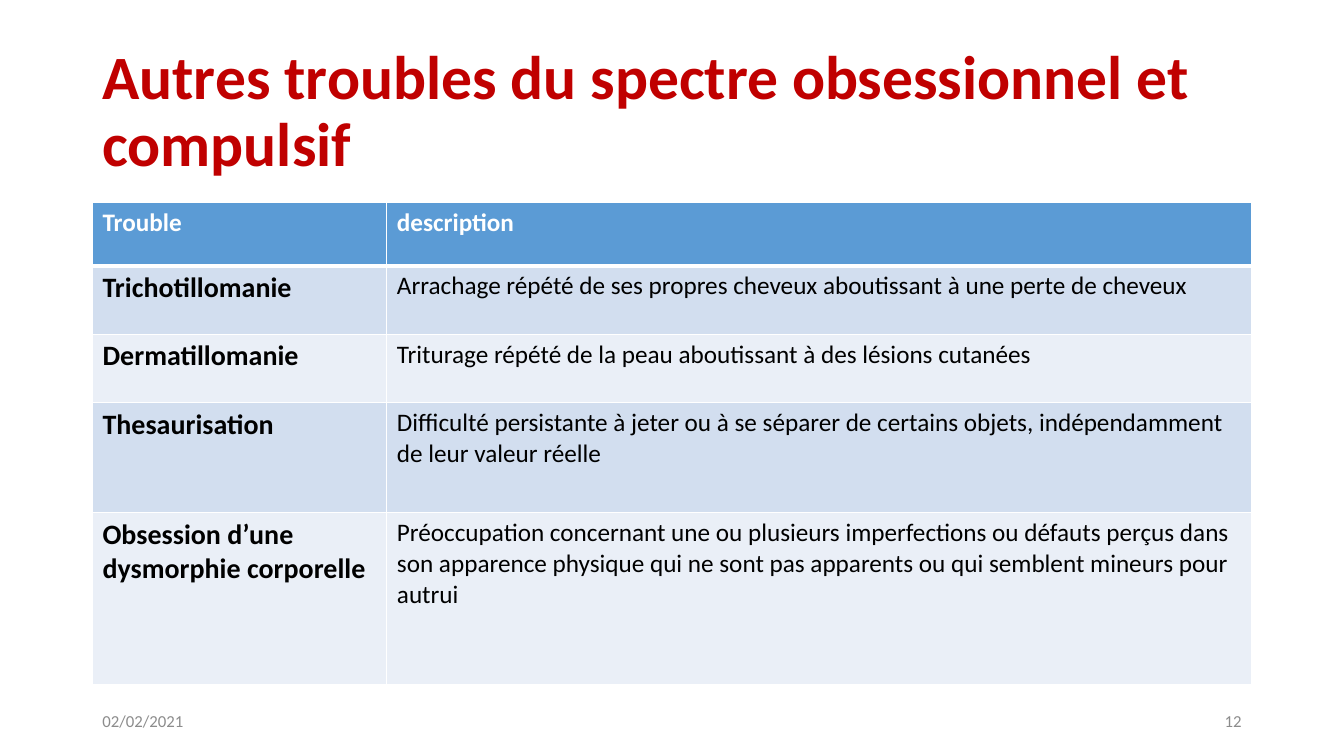
from dataclasses import dataclass

from pptx import Presentation
from pptx.dml.color import RGBColor as Color
from pptx.enum.text import MSO_ANCHOR as Anchor, PP_ALIGN as Align
from pptx.oxml import parse_xml
from pptx.oxml.ns import nsdecls
from pptx.util import Cm, Pt


@dataclass(frozen=True)
class Theme:
    font: str = "Calibri"
    title: str = "C00000"
    header: str = "5B9BD5"
    bands: tuple = ("D2DEEF", "EAEFF7")
    light: str = "FFFFFF"
    ink: str = "000000"
    muted: str = "8C8C8C"
    title_size: int = 44
    name_size: int = 20
    body_size: int = 18
    footer_size: int = 12


class SlideBuilder:
    def __init__(self, page, theme):
        self.page = page
        self.theme = theme

    def add_words(self, frame, text, size, color, bold=False, align=Align.LEFT, spacing=1.0):
        frame.word_wrap = True
        para = frame.paragraphs[0]
        para.alignment = align
        para.line_spacing = spacing
        span = para.add_run()
        span.text = text
        span.font.name = self.theme.font
        span.font.size = Pt(size)
        span.font.bold = bold
        span.font.color.rgb = Color.from_string(color)

    def add_text(self, left, top, width, height, text, size, color, **style):
        box = self.page.shapes.add_textbox(Cm(left), Cm(top), Cm(width), Cm(height))
        box.text_frame.vertical_anchor = Anchor.MIDDLE
        self.add_words(box.text_frame, text, size, color, **style)

    def add_borders(self, cell, above, below):
        properties = cell._tc.get_or_add_tcPr()
        sides = (("L", 1), ("R", 1), ("T", above), ("B", below))
        for position, (side, points) in enumerate(sides):
            properties.insert(position, parse_xml(
                f'<a:ln{side} {nsdecls("a")} w="{Pt(points)}"><a:solidFill>'
                f'<a:srgbClr val="{self.theme.light}"/></a:solidFill></a:ln{side}>'))

    def fill_cell(self, cell, text, size, color, fill, bold, above, below):
        cell.fill.solid()
        cell.fill.fore_color.rgb = Color.from_string(fill)
        self.add_borders(cell, above, below)
        self.add_words(cell.text_frame, text, size, color, bold)

    def add_table(self, left, top, widths, heights, rows):
        theme = self.theme
        table = self.page.shapes.add_table(
            len(rows), len(widths), Cm(left), Cm(top),
            Cm(sum(widths)), Cm(sum(heights))).table
        for column, width in zip(table.columns, widths):
            column.width = Cm(width)
        for index, (row, height) in enumerate(zip(rows, heights)):
            table.rows[index].height = Cm(height)
            header = index == 0
            fill = theme.header if header else theme.bands[(index - 1) % 2]
            color = theme.light if header else theme.ink
            for column, text in enumerate(row):
                name = column == 0
                size = theme.name_size if name and not header else theme.body_size
                self.fill_cell(table.cell(index, column), text, size, color, fill,
                               bold=header or name,
                               above=3 if index == 1 else 1, below=3 if header else 1)


ROWS = [
    ("Trouble", "description"),
    ("Trichotillomanie",
     "Arrachage répété de ses propres cheveux aboutissant à une perte de cheveux"),
    ("Dermatillomanie",
     "Triturage répété de la peau aboutissant à des lésions cutanées"),
    ("Thesaurisation",
     "Difficulté persistante à jeter ou à se séparer de certains objets, "
     "indépendamment de leur valeur réelle"),
    ("Obsession d’une dysmorphie corporelle",
     "Préoccupation concernant une ou plusieurs imperfections ou défauts perçus "
     "dans son apparence physique qui ne sont pas apparents ou qui semblent "
     "mineurs pour autrui"),
]


def main():
    deck = Presentation()
    deck.slide_width, deck.slide_height = Cm(33.87), Cm(19.05)
    theme = Theme()
    builder = SlideBuilder(deck.slides.add_slide(deck.slide_layouts[6]), theme)
    left, widths, footer_width = 2.33, (7.42, 21.79), 7.62
    total = sum(widths)

    builder.add_text(left, 1.01, total, 3.68,
                     "Autres troubles du spectre obsessionnel et compulsif",
                     theme.title_size, theme.title, bold=True, spacing=0.9)
    builder.add_table(left, 5.1, widths, (1.6, 1.72, 1.73, 2.77, 4.34), ROWS)
    footers = ((left, "02/02/2021", Align.LEFT),
               (left + total - footer_width, "12", Align.RIGHT))
    for position, text, align in footers:
        builder.add_text(position, 17.66, footer_width, 1.01, text,
                         theme.footer_size, theme.muted, align=align)
    deck.save("out.pptx")


if __name__ == "__main__":
    main()
